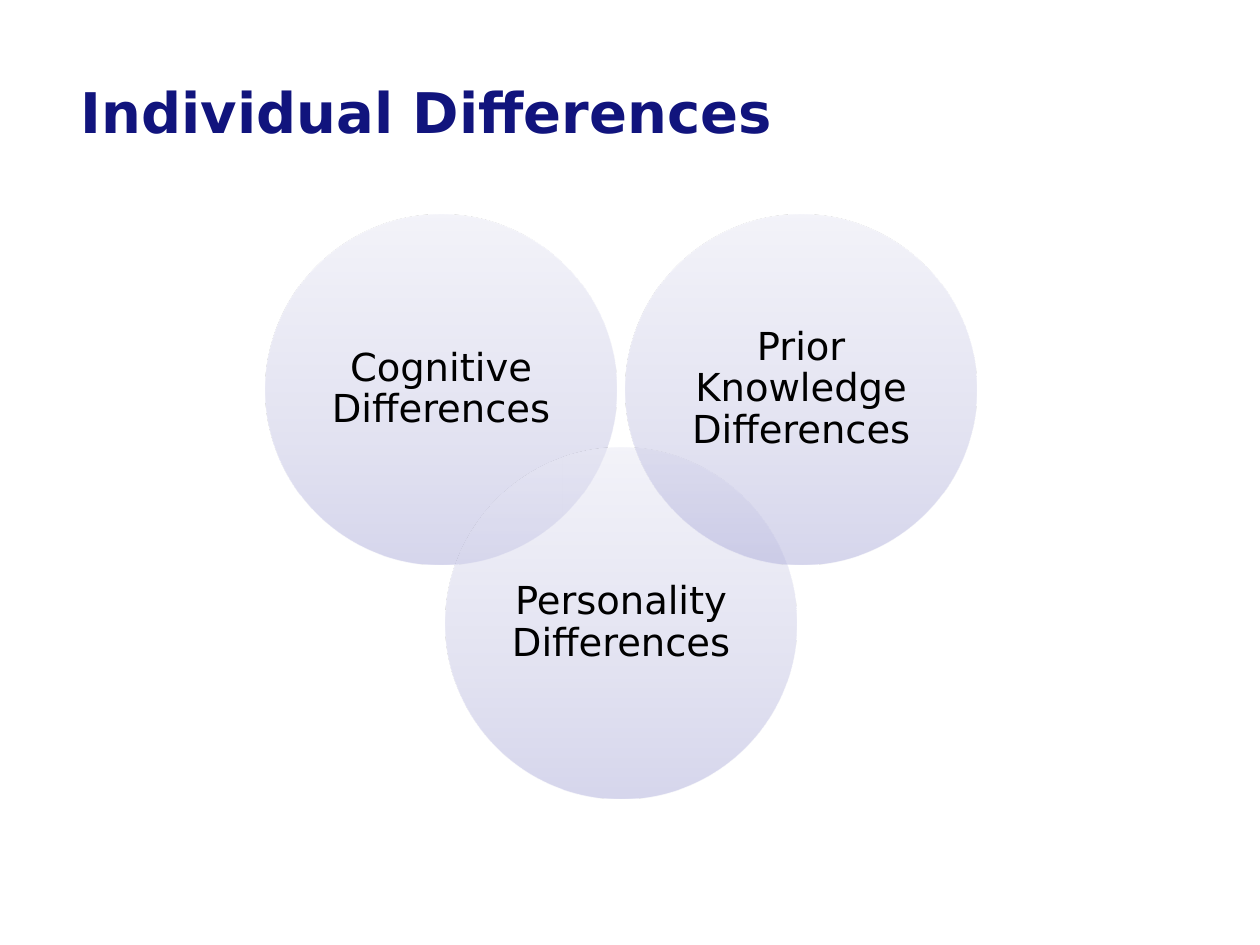
"""Build the Individual Differences slide with three overlapping circles."""
from lxml import etree
from pptx import Presentation
from pptx import util as u
from pptx.dml.color import RGBColor
from pptx.enum import shapes, text
from pptx.oxml import ns

NAVY = RGBColor(0x11, 0x14, 0x7D)
BLACK = RGBColor(0x00, 0x00, 0x00)
LAVENDER = RGBColor(0xAE, 0xAE, 0xDB)
LILAC = RGBColor(0xC7, 0xC7, 0xE5)
MIST = RGBColor(0xE9, 0xE9, 0xF5)
GRADIENT = ((0, LAVENDER), (35, LILAC), (100, MIST))

DIAMETER = 7.06
LABEL_INSET = 1.03
LEFT, TOP = 5.36, 4.32
STEP, DROP = 3.63, 4.71
CIRCLES = (("Cognitive Differences", 0),
           ("Personality Differences", DROP),
           ("Prior Knowledge Differences", 0))


class Deck:
    font = "DejaVu Sans"

    def __init__(self):
        self.prs = Presentation()
        self.prs.slide_width, self.prs.slide_height = u.Cm(25.4), u.Cm(19.05)
        self.s = self.prs.slides.add_slide(self.prs.slide_layouts[6])

    def textbox(self, parent, words, box, size, color, inset=0.23, bold=False):
        sp = parent.add_textbox(*map(u.Cm, box))
        tf = sp.text_frame
        tf.word_wrap = True
        tf.vertical_anchor = text.MSO_ANCHOR.MIDDLE
        tf.margin_left = tf.margin_right = u.Cm(inset)
        tf.margin_top = tf.margin_bottom = u.Cm(0.23)
        p = tf.paragraphs[0]
        r = p.add_run()
        r.text = words
        r.font.name, r.font.size, r.font.bold = self.font, u.Pt(size), bold
        r.font.color.rgb = color
        return p

    def title(self, words):
        self.textbox(self.s.shapes, words, (0.84, 1.07, 24.13, 2.34), 32, NAVY,
                     inset=0.79, bold=True)

    def circle(self, parent, left, top):
        box = map(u.Cm, (left, top, DIAMETER, DIAMETER))
        sp = parent.add_shape(shapes.MSO_SHAPE.OVAL, *box)
        sp.shadow.inherit = False
        sp.line.fill.background()
        sp.fill.gradient()
        sp.fill.gradient_angle = 90
        stops = sp.element.spPr.find(ns.qn("a:gradFill")).find(ns.qn("a:gsLst"))
        stops.clear()
        for position, color in GRADIENT:
            stop = etree.SubElement(stops, ns.qn("a:gs"), pos=str(position * 1000))
            rgb = etree.SubElement(stop, ns.qn("a:srgbClr"), val=str(color))
            etree.SubElement(rgb, ns.qn("a:alpha"), val="50000")

    def label(self, parent, words, left, top):
        side = DIAMETER - 2 * LABEL_INSET
        box = (left + LABEL_INSET, top + LABEL_INSET, side, side)
        p = self.textbox(parent, words, box, 22, BLACK)
        p.alignment = text.PP_ALIGN.CENTER
        p.line_spacing = 0.9

    def venn(self, circles):
        group = self.s.shapes.add_group_shape().shapes
        for i, (words, drop) in enumerate(circles):
            left, top = LEFT + i * STEP, TOP + drop
            self.circle(group, left, top)
            self.label(group, words, left, top)


def main():
    deck = Deck()
    deck.title("Individual Differences")
    deck.venn(CIRCLES)
    deck.prs.save("out.pptx")


if __name__ == "__main__":
    main()
